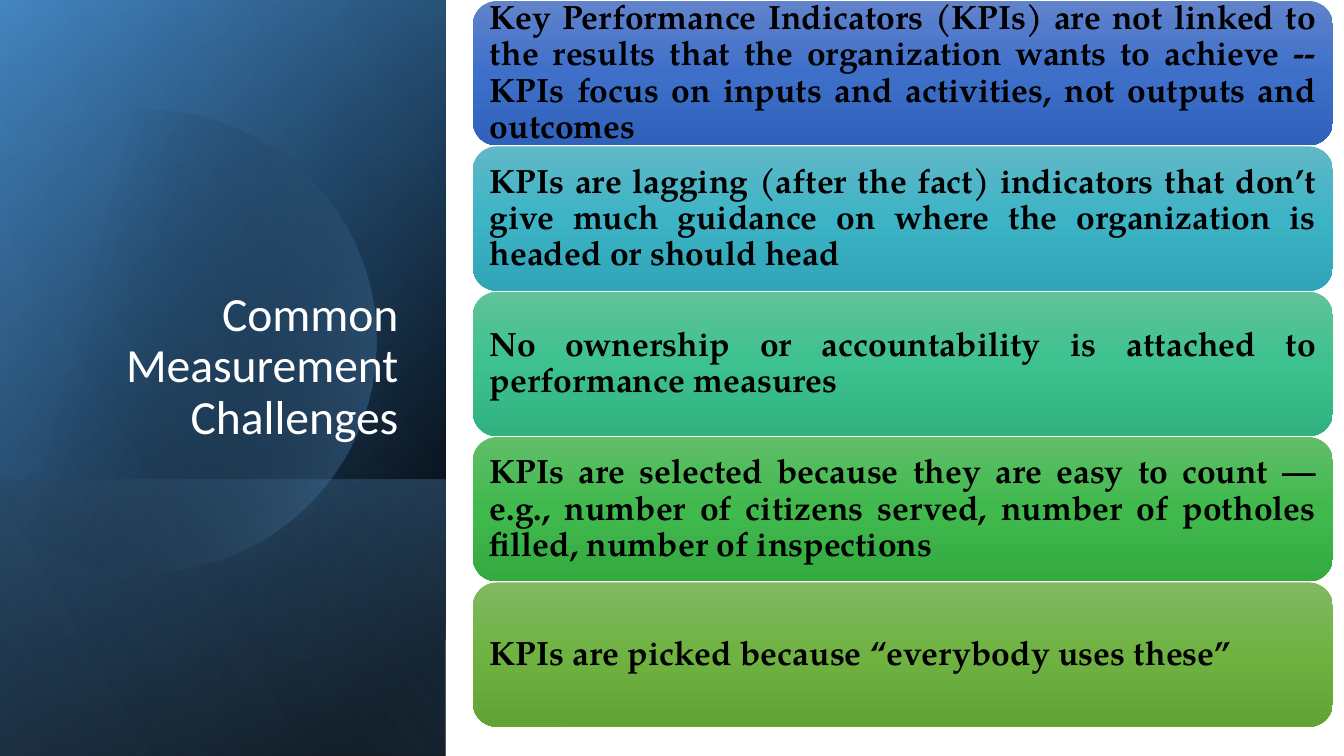
import math

import pptx
import pptx.dml.color
import pptx.enum.shapes
import pptx.enum.text
import pptx.oxml.ns
import pptx.util
from lxml import etree

RGB = pptx.dml.color.RGBColor
SHAPE = pptx.enum.shapes.MSO_SHAPE
ALIGN = pptx.enum.text.PP_ALIGN
ANCHOR = pptx.enum.text.MSO_ANCHOR
qn = pptx.oxml.ns.qn

PX = 9144
BLACK = RGB(0x00, 0x00, 0x00)
WHITE = RGB(0xFF, 0xFF, 0xFF)
DEEP_BLUE = RGB(0x2E, 0x75, 0xB6)
MID_BLUE = RGB(0x5B, 0x9B, 0xD5)
PALE_BLUE = RGB(0x9D, 0xC3, 0xE6)

CHALLENGES = [
    ("Key Performance Indicators (KPIs) are not linked to the results that the "
     "organization wants to achieve -- KPIs focus on inputs and activities, not "
     "outputs and outcomes",
     (RGB(0x61, 0x83, 0xCB), RGB(0x3E, 0x70, 0xCA), RGB(0x30, 0x62, 0xBB))),
    ("KPIs are lagging (after the fact) indicators that don’t give much guidance "
     "on where the organization is headed or should head",
     (RGB(0x61, 0xB8, 0xC7), RGB(0x3D, 0xB4, 0xC6), RGB(0x30, 0xA5, 0xB7))),
    ("No ownership or accountability is attached to performance measures",
     (RGB(0x60, 0xC3, 0x9A), RGB(0x3D, 0xC1, 0x8F), RGB(0x31, 0xB0, 0x80))),
    ("KPIs are selected because they are easy to count — e.g., number of citizens "
     "served, number of potholes filled, number of inspections",
     (RGB(0x60, 0xBE, 0x68), RGB(0x40, 0xB9, 0x4D), RGB(0x34, 0xAA, 0x41))),
    ("KPIs are picked because “everybody uses these”",
     (RGB(0x81, 0xB8, 0x61), RGB(0x6F, 0xB2, 0x42), RGB(0x62, 0xA3, 0x36))),
]


def emu(*lengths):
    return [round(length * PX) for length in lengths]


def paint(shape, stops, angle):
    shape.shadow.inherit = False
    shape.line.fill.background()
    shape.fill.gradient()
    shape.fill.gradient_angle = 360 - angle
    stop_list = next(shape._element.spPr.iter(qn("a:gsLst")))
    for old_stop in list(stop_list):
        stop_list.remove(old_stop)
    for position, color, opacity in stops:
        stop = etree.SubElement(stop_list, qn("a:gs"), pos=str(position * 1000))
        tint = etree.SubElement(stop, qn("a:srgbClr"), val=str(color))
        if opacity < 100:
            etree.SubElement(tint, qn("a:alpha"), val=str(opacity * 1000))


def write(shape, text, *, font, size, color, align, anchor, bold=False, inset=(10, 10)):
    frame = shape.text_frame
    frame.word_wrap = True
    frame.vertical_anchor = anchor
    frame.margin_left = frame.margin_right = inset[0] * PX
    frame.margin_top = frame.margin_bottom = inset[1] * PX
    paragraph = frame.paragraphs[0]
    paragraph.alignment = align
    paragraph.line_spacing = 0.9
    run = paragraph.add_run()
    run.text = text
    run.font.name = font
    run.font.size = pptx.util.Pt(size)
    run.font.bold = bold
    run.font.color.rgb = color


def add_turned_layer(slide, box, stops, angle):
    left, top, width, height = box
    shift = (width - height) / 2
    layer = slide.shapes.add_shape(
        SHAPE.RECTANGLE, *emu(left + shift, top - shift, height, width))
    layer.rotation = 90
    layer._element.spPr.find(qn("a:xfrm")).set("flipH", "1")
    paint(layer, stops, angle)


def add_cut_circle(slide, center_x, center_y, radius, cut_x):
    reach = math.degrees(math.acos((cut_x - center_x) / radius))
    steps = 120
    angles = [math.radians(reach * (2 * step / steps - 1)) for step in range(steps + 1)]
    points = [emu(center_x + radius * math.cos(a), center_y + radius * math.sin(a))
              for a in angles]
    builder = slide.shapes.build_freeform(*points[0])
    builder.add_line_segments(points[1:], close=True)
    paint(builder.convert_to_shape(), [(29, BLACK, 0), (100, MID_BLUE, 43)], 14)


def add_title_panel(slide, box):
    left, top, width, height = box
    add_turned_layer(slide, box, [(8, BLACK, 100), (100, DEEP_BLUE, 100)], 50)
    add_turned_layer(slide, box, [(0, BLACK, 0), (99, MID_BLUE, 46)], 30)
    add_turned_layer(slide, (left, top + height - 274, width, 274),
                     [(2, MID_BLUE, 29), (100, BLACK, 30)], 130)
    add_cut_circle(slide, left + 144, top + 338, 229, left - 15)
    add_turned_layer(slide, box, [(0, BLACK, 0), (99, PALE_BLUE, 11)], 120)
    title = slide.shapes.add_textbox(*emu(left + 64, top + 184, 341, 262))
    write(title, "Common Measurement Challenges", font="Calibri", size=34,
          color=WHITE, align=ALIGN.RIGHT, anchor=ANCHOR.BOTTOM, inset=(10, 5))


def add_challenge_cards(slide, box, gap):
    left, top, width, height = box
    pitch = (height + gap) / len(CHALLENGES)
    for index, (challenge, shades) in enumerate(CHALLENGES):
        card = slide.shapes.add_shape(
            SHAPE.ROUNDED_RECTANGLE, *emu(left, top + index * pitch, width, pitch - gap))
        paint(card, [(50 * i, shade, 100) for i, shade in enumerate(shades)], 90)
        write(card, challenge, font="TeX Gyre Pagella", size=24, color=BLACK,
              align=ALIGN.JUSTIFY, anchor=ANCHOR.MIDDLE, bold=True)


def main():
    deck = pptx.Presentation()
    deck.slide_width, deck.slide_height = emu(1333, 750)
    slide = deck.slides.add_slide(deck.slide_layouts[6])
    add_title_panel(slide, (0, 0, 442, 750))
    add_challenge_cards(slide, (469, 1, 853, 720), 1)
    deck.save("out.pptx")


if __name__ == "__main__":
    main()
